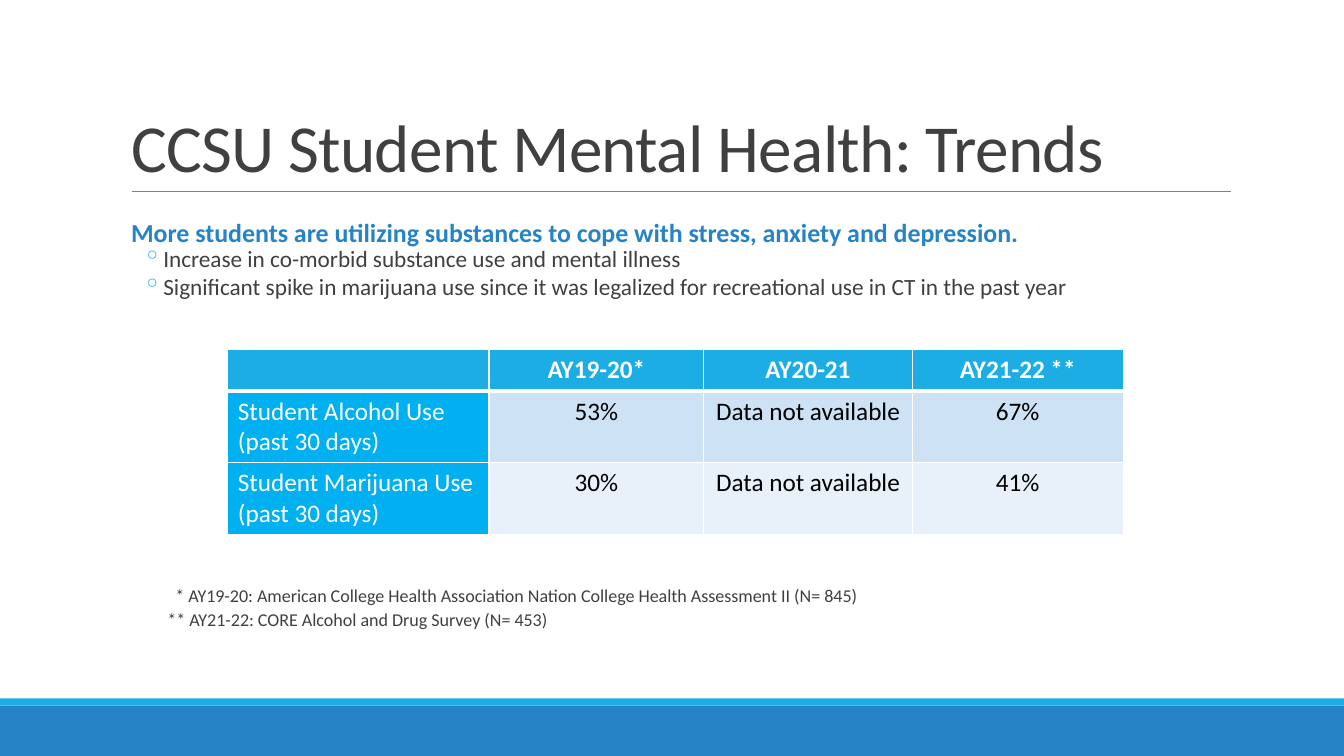
from lxml.etree import SubElement
from pptx import Presentation
from pptx.dml.color import RGBColor
from pptx.enum.shapes import MSO_CONNECTOR, MSO_SHAPE
from pptx.enum.text import MSO_ANCHOR, MSO_AUTO_SIZE, PP_ALIGN
from pptx.oxml import parse_xml
from pptx.oxml.ns import nsdecls, qn
from pptx.util import Inches, Pt

WIDTH, HEIGHT = 13.33, 7.5
MARGIN, CONTENT_WIDTH = 1.2, 11
FONT = "Calibri"

WHITE = RGBColor(0xFF, 0xFF, 0xFF)
BLACK = RGBColor(0, 0, 0)
INK = RGBColor(0x40, 0x40, 0x40)
RULE_GRAY = RGBColor(0x80, 0x80, 0x80)
BLUE = RGBColor(0x26, 0x83, 0xC6)
CYAN = RGBColor(0x1C, 0xAD, 0xE4)
ROW_LABEL = RGBColor(0x00, 0xB0, 0xF0)
ROW_TINTS = [RGBColor(0xCD, 0xE3, 0xF5), RGBColor(0xE8, 0xF1, 0xFA)]

TITLE = "CCSU Student Mental Health: Trends"
FINDING = "More students are utilizing substances to cope with stress, anxiety and depression."
DETAILS = [
    "Increase in co-morbid substance use and mental illness",
    "Significant spike in marijuana use since it was legalized for recreational use in CT in the past year",
]
USE_RATES = [
    ["", "AY19-20*", "AY20-21", "AY21-22 **"],
    ["Student Alcohol Use\n(past 30 days)", "53%", "Data not available", "67%"],
    ["Student Marijuana Use\n(past 30 days)", "30%", "Data not available", "41%"],
]
COLUMN_WIDTHS = [2.59, 2.13, 2.07, 2.09]
ROW_HEIGHTS = [0.41, 0.71, 0.71]
# Each footnote with the indent that lines up its asterisks
FOOTNOTES = [
    ("* AY19-20: American College Health Association Nation College Health Assessment II (N= 845)", 0.12),
    ("** AY21-22: CORE Alcohol and Drug Survey (N= 453)", 0.04),
]


def add_text(paragraph, text, size, color, bold=False):
    run = paragraph.add_run()
    run.text = text
    run.font.name, run.font.size, run.font.bold = FONT, Pt(size), bold
    run.font.color.rgb = color
    return run


def format_paragraph(paragraph, left, hanging=0, before=2, after=4, bullet=None):
    paragraph.line_spacing = 0.7
    paragraph.space_before, paragraph.space_after = Pt(before), Pt(after)
    properties = paragraph._p.get_or_add_pPr()
    properties.set("marL", str(Inches(left)))
    properties.set("indent", str(-Inches(hanging)))
    if bullet:
        color = SubElement(properties, qn("a:buClr"))
        SubElement(color, qn("a:srgbClr")).set("val", str(CYAN))
        SubElement(properties, qn("a:buChar")).set("char", bullet)


def add_text_frame(slide, left, top, width, height):
    box = slide.shapes.add_textbox(Inches(left), Inches(top), Inches(width), Inches(height))
    frame = box.text_frame
    frame.word_wrap = True
    frame.margin_left = frame.margin_right = 0
    frame.margin_top = frame.margin_bottom = 0
    return frame


def next_paragraph(frame, index):
    return frame.add_paragraph() if index else frame.paragraphs[0]


def add_band(slide, top, height, color):
    band = slide.shapes.add_shape(
        MSO_SHAPE.RECTANGLE, 0, Inches(top), Inches(WIDTH), Inches(height))
    band.shadow.inherit = False
    band.fill.solid()
    band.fill.fore_color.rgb = color
    band.line.fill.background()


def add_title_rule(slide):
    rule = slide.shapes.add_connector(
        MSO_CONNECTOR.STRAIGHT, Inches(1.31), Inches(1.9), Inches(12.21), Inches(1.9))
    rule.line.color.rgb = RULE_GRAY
    rule.line.width = Pt(0.5)
    SubElement(rule._element.spPr, qn("a:effectLst"))


def format_title(slide):
    title = slide.shapes.title
    title.left, title.top = Inches(MARGIN), Inches(0.31)
    title.width, title.height = Inches(CONTENT_WIDTH), Inches(1.59)
    frame = title.text_frame
    frame.word_wrap = True
    frame.auto_size = MSO_AUTO_SIZE.NONE
    frame.vertical_anchor = MSO_ANCHOR.BOTTOM
    heading = frame.paragraphs[0]
    heading.alignment = PP_ALIGN.LEFT
    heading.line_spacing = 0.85
    run = add_text(heading, TITLE, 48, INK)
    run.font._element.set("spc", "-50")


def add_findings(slide):
    frame = add_text_frame(slide, MARGIN, 2.23, CONTENT_WIDTH, 0.85)
    finding = frame.paragraphs[0]
    format_paragraph(finding, 0.1, before=12, after=2)
    add_text(finding, FINDING, 18.5, BLUE, bold=True)
    for detail in DETAILS:
        paragraph = frame.add_paragraph()
        format_paragraph(paragraph, 0.42, hanging=0.2, bullet="◦")
        add_text(paragraph, detail, 16.6, INK)


def add_borders(cell, row):
    """Thin white edges, with a thick one between header and data."""
    widths = {"L": 1, "R": 1, "T": 3 if row == 1 else 1, "B": 3 if row == 0 else 1}
    properties = cell._tc.get_or_add_tcPr()
    for position, (side, width) in enumerate(widths.items()):
        properties.insert(position, parse_xml(
            f'<a:ln{side} {nsdecls("a")} w="{Pt(width)}"><a:solidFill>'
            f'<a:srgbClr val="{WHITE}"/></a:solidFill></a:ln{side}>'))


def fill_cell(cell, text, row, column):
    is_header, is_label = row == 0, column == 0
    cell.fill.solid()
    cell.fill.fore_color.rgb = (
        CYAN if is_header else ROW_LABEL if is_label else ROW_TINTS[row - 1])
    add_borders(cell, row)
    for index, line in enumerate(text.split("\n")):
        paragraph = next_paragraph(cell.text_frame, index)
        paragraph.alignment = PP_ALIGN.LEFT if is_label else PP_ALIGN.CENTER
        if line:
            color = WHITE if is_header or is_label else BLACK
            add_text(paragraph, line, 18, color, bold=is_header)


def add_use_table(slide):
    table = slide.shapes.add_table(
        len(ROW_HEIGHTS), len(COLUMN_WIDTHS), Inches(2.26), Inches(3.47),
        Inches(sum(COLUMN_WIDTHS)), Inches(sum(ROW_HEIGHTS))).table
    table.horz_banding = False
    for column, width in zip(table.columns, COLUMN_WIDTHS):
        column.width = Inches(width)
    for row, height in zip(table.rows, ROW_HEIGHTS):
        row.height = Inches(height)
    for row, texts in enumerate(USE_RATES):
        for column, text in enumerate(texts):
            fill_cell(table.cell(row, column), text, row, column)


def add_footnotes(slide):
    frame = add_text_frame(slide, 1.62, 5.86, 10.58, 0.5)
    for index, (footnote, indent) in enumerate(FOOTNOTES):
        paragraph = next_paragraph(frame, index)
        format_paragraph(paragraph, indent)
        add_text(paragraph, footnote, 12.9, INK)


def main():
    presentation = Presentation()
    presentation.slide_width, presentation.slide_height = Inches(WIDTH), Inches(HEIGHT)
    slide = presentation.slides.add_slide(presentation.slide_layouts[5])

    # Footer bands
    add_band(slide, HEIGHT - 0.5, 0.5, BLUE)
    add_band(slide, HEIGHT - 0.57, 0.07, CYAN)

    # Heading
    add_title_rule(slide)
    format_title(slide)

    # Content
    add_findings(slide)
    add_use_table(slide)
    add_footnotes(slide)
    presentation.save("out.pptx")


if __name__ == "__main__":
    main()
